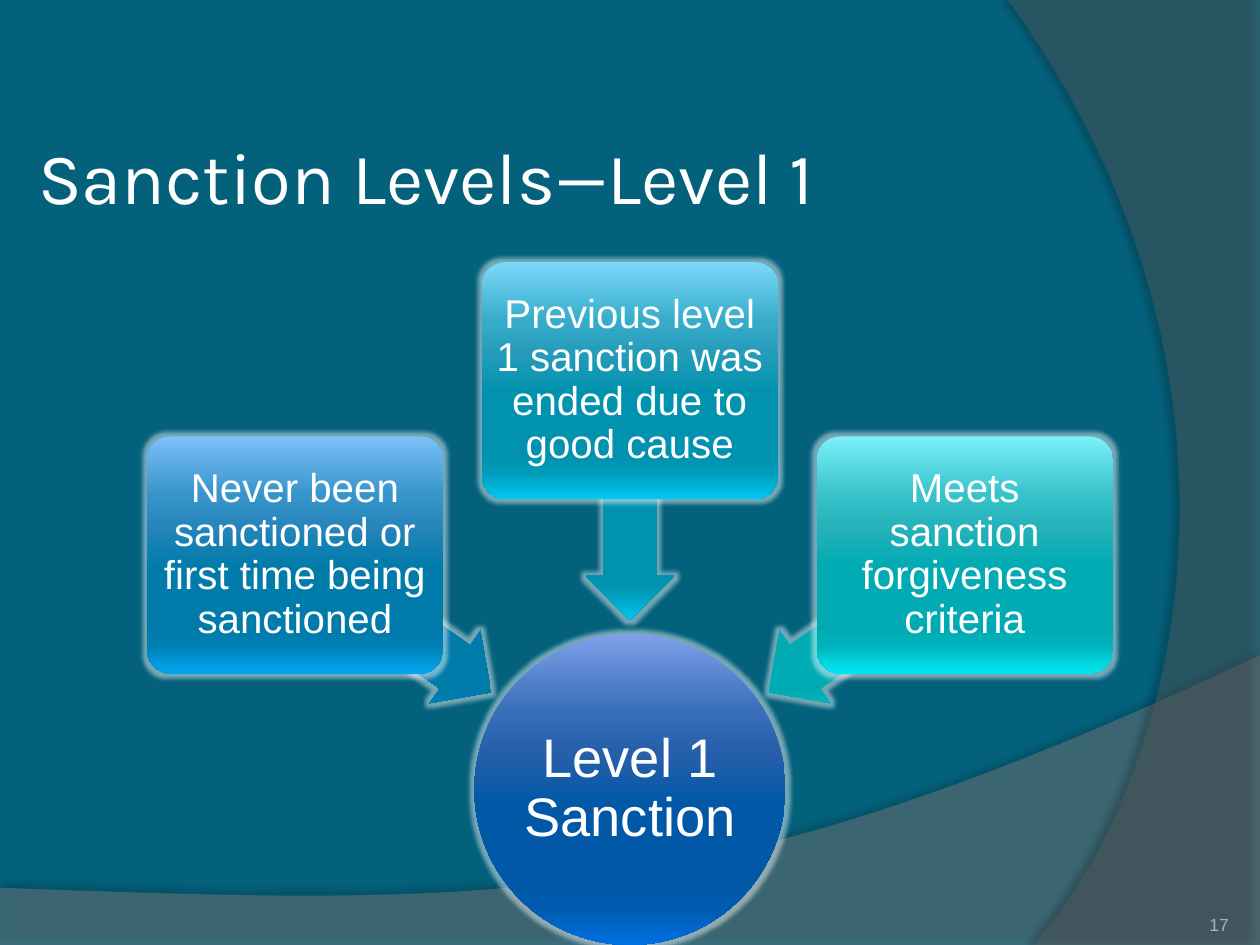
from collections import namedtuple
from math import cos, radians, sin

from lxml.etree import SubElement
from pptx import Presentation
from pptx.dml.color import RGBColor
from pptx.enum.shapes import MSO_SHAPE
from pptx.enum.text import MSO_ANCHOR, PP_ALIGN
from pptx.oxml.ns import qn
from pptx.util import Cm, Pt

Box = namedtuple("Box", "left top width height")

COLORS = {
    "background": "04617B", "text": "FFFFFF", "number": "A2B5B8",
    "hill": "7F7F7F", "arc": "5E5E5E", "shadow": "000000", "glow": "FFFFFF",
}
STOPS = (0, 25, 38, 55, 80, 88, 100)
GRADIENTS = {
    "royal": ("7FA1E9", "376EB9", "285FAA", "0058A7", "0057A6", "005BAE", "0070E2"),
    "blue": ("7BC0F9", "3694CA", "2685BA", "007BAA", "007AA9", "0080B2", "00A7F1"),
    "cyan": ("7BD8F9", "36ACCA", "269CBA", "0092AE", "0091AD", "0099B6", "00C8F2"),
    "teal": ("7CF0F9", "36C2CA", "26B2BA", "00ABB3", "00A9B1", "00B2BB", "00E8F3"),
}
REASONS = (
    (215, "blue", "Never been sanctioned or first time being sanctioned"),
    (270, "cyan", "Previous level 1 sanction was ended due to good cause"),
    (325, "teal", "Meets sanction forgiveness criteria"),
)


def add_color(parent, color, alpha=100):
    """Append an RGB colour with an opacity in percent."""
    node = SubElement(parent, qn("a:srgbClr"), val=color)
    if alpha < 100:
        SubElement(node, qn("a:alpha"), val=str(alpha * 1000))


def write(frame, text, size, color, align, anchor, font="Arial", inset=0.0, spacing=1.0):
    """Put one formatted run into a text frame."""
    frame.word_wrap = True
    frame.vertical_anchor = anchor
    frame.margin_left = frame.margin_right = Cm(inset)
    frame.margin_top = frame.margin_bottom = Cm(inset)
    para = frame.paragraphs[0]
    para.alignment = align
    para.line_spacing = spacing
    span = para.add_run()
    span.text = text
    span.font.name = font
    span.font.size = Pt(size)
    span.font.color.rgb = RGBColor.from_string(COLORS[color])


def add_glossy(page, kind, center, size, gradient):
    """Add a centred shape with a vertical gradient and a soft glow."""
    (x, y), (width, height) = center, size
    shape = page.shapes.add_shape(
        kind, Cm(x - width / 2), Cm(y - height / 2), Cm(width), Cm(height))
    shape.line.fill.background()
    shape.shadow.inherit = False
    properties = shape._element.spPr
    fill = properties.makeelement(qn("a:gradFill"), {"rotWithShape": "0"})
    properties.find(qn("a:ln")).addprevious(fill)
    stops = SubElement(fill, qn("a:gsLst"))
    for position, color in zip(STOPS, GRADIENTS[gradient]):
        add_color(SubElement(stops, qn("a:gs"), pos=str(position * 1000)), color)
    SubElement(fill, qn("a:lin"), ang="5400000", scaled="0")
    effects = properties.find(qn("a:effectLst"))
    glow = SubElement(effects, qn("a:glow"), rad=str(Pt(5)))
    add_color(glow, COLORS["glow"], 45)
    return shape


def curve_points(start, first, second, end, steps=48):
    """Sample a cubic curve between two points."""
    for step in range(1, steps + 1):
        t = step / steps
        weights = ((1 - t) ** 3, 3 * t * (1 - t) ** 2, 3 * t * t * (1 - t), t ** 3)
        yield tuple(sum(weight * value for weight, value in zip(weights, axis))
                    for axis in zip(start, first, second, end))


def add_wave(page, box, corners, curve, color, alpha, shadow):
    """Draw a translucent area with one curved edge inside the box."""
    points = [(Cm(box.left + x * box.width), Cm(box.top + y * box.height))
              for x, y in (*corners, *curve_points(corners[-1], *curve))]
    builder = page.shapes.build_freeform(*points[0], scale=1.0)
    builder.add_line_segments(points[1:], close=True)
    wave = builder.convert_to_shape()
    wave.line.fill.background()
    wave.shadow.inherit = False
    wave.fill.solid()
    wave.fill.fore_color.rgb = RGBColor.from_string(COLORS[color])
    properties = wave._element.spPr
    SubElement(properties.find(qn("a:solidFill"))[0], qn("a:alpha"), val=str(alpha * 1000))
    opacity, distance, angle = shadow
    cast = SubElement(properties.find(qn("a:effectLst")), qn("a:outerShdw"),
                      blurRad=str(Pt(4)), dist=str(Pt(distance)), dir=str(angle * 60000))
    add_color(cast, COLORS["shadow"], opacity)


def add_backdrop(page, box):
    """Colour the page and add the hill and the arc."""
    page.background.fill.solid()
    page.background.fill.fore_color.rgb = RGBColor.from_string(COLORS["background"])
    hill = Box(box.left, box.top + 13.21, box.width, 5.86)
    add_wave(page, hill, ((0, 0.8), (0, 1), (1, 1), (1, 0)),
             ((0.56, 0.9), (0.39, 0.86), (0, 0.8)), "hill", 45, (35, 3.5, 270))
    arc = Box(box.left + 20.32, box.top, 5.08, box.height)
    add_wave(page, arc, ((1, 0), (1, 1), (0.1, 1)),
             ((0.68, 0.83), (1.09, 0.4), (0, 0)), "arc", 40, (45, 4, 180))


def add_title(page, box, text):
    """Place and format the title placeholder."""
    title = page.shapes.title
    title.left, title.top, title.width, title.height = map(Cm, box)
    write(title.text_frame, text, 41.4, "text", PP_ALIGN.LEFT, MSO_ANCHOR.MIDDLE,
          "Karla", 0.13)


def add_converging_diagram(page, box, result, reasons):
    """Set the reasons on an arc around the result they lead to."""
    diameter = 6.27
    center = (box.left + box.width / 2, box.top + box.height - diameter / 2)

    def around(angle, radius):
        """Return the point at an angle and distance from the result."""
        return (center[0] + radius * cos(radians(angle)),
                center[1] + radius * sin(radians(angle)))

    circle = add_glossy(page, MSO_SHAPE.OVAL, center, (diameter, diameter), "royal")
    write(circle.text_frame, result, 31, "text", PP_ALIGN.CENTER, MSO_ANCHOR.MIDDLE,
          inset=0.05, spacing=0.9)
    for angle, gradient, text in reasons:
        arrow = add_glossy(page, MSO_SHAPE.LEFT_ARROW, around(angle, 5.83),
                           (4.83, 1.78), gradient)
        arrow.adjustments[0], arrow.adjustments[1] = 0.6, 0.5
        arrow.rotation = angle
        card = add_glossy(page, MSO_SHAPE.ROUNDED_RECTANGLE, around(angle, 8.24),
                          (5.97, 4.78), gradient)
        card.adjustments[0] = 0.1
        write(card.text_frame, text, 23, "text", PP_ALIGN.CENTER, MSO_ANCHOR.MIDDLE,
              inset=0.13, spacing=0.9)


def add_page_number(page, box, number):
    """Write the page number at the lower right of the box."""
    label = page.shapes.add_textbox(*map(Cm, box))
    write(label.text_frame, number, 10, "number", PP_ALIGN.RIGHT, MSO_ANCHOR.BOTTOM)


def main():
    """Build and save the deck."""
    deck = Presentation()
    deck.slide_width, deck.slide_height = Cm(25.4), Cm(19.05)
    page = deck.slides.add_slide(deck.slide_layouts[5])
    add_backdrop(page, Box(0, 0, 25.4, 19.05))
    add_title(page, Box(0.64, 2.54, 23.5, 1.98), "Sanction Levels—Level 1")
    add_converging_diagram(page, Box(2.97, 5.28, 19.46, 13.77), "Level 1 Sanction", REASONS)
    add_page_number(page, Box(22.66, 17.83, 2.11, 1.02), "17")
    deck.save("out.pptx")


if __name__ == "__main__":
    main()
